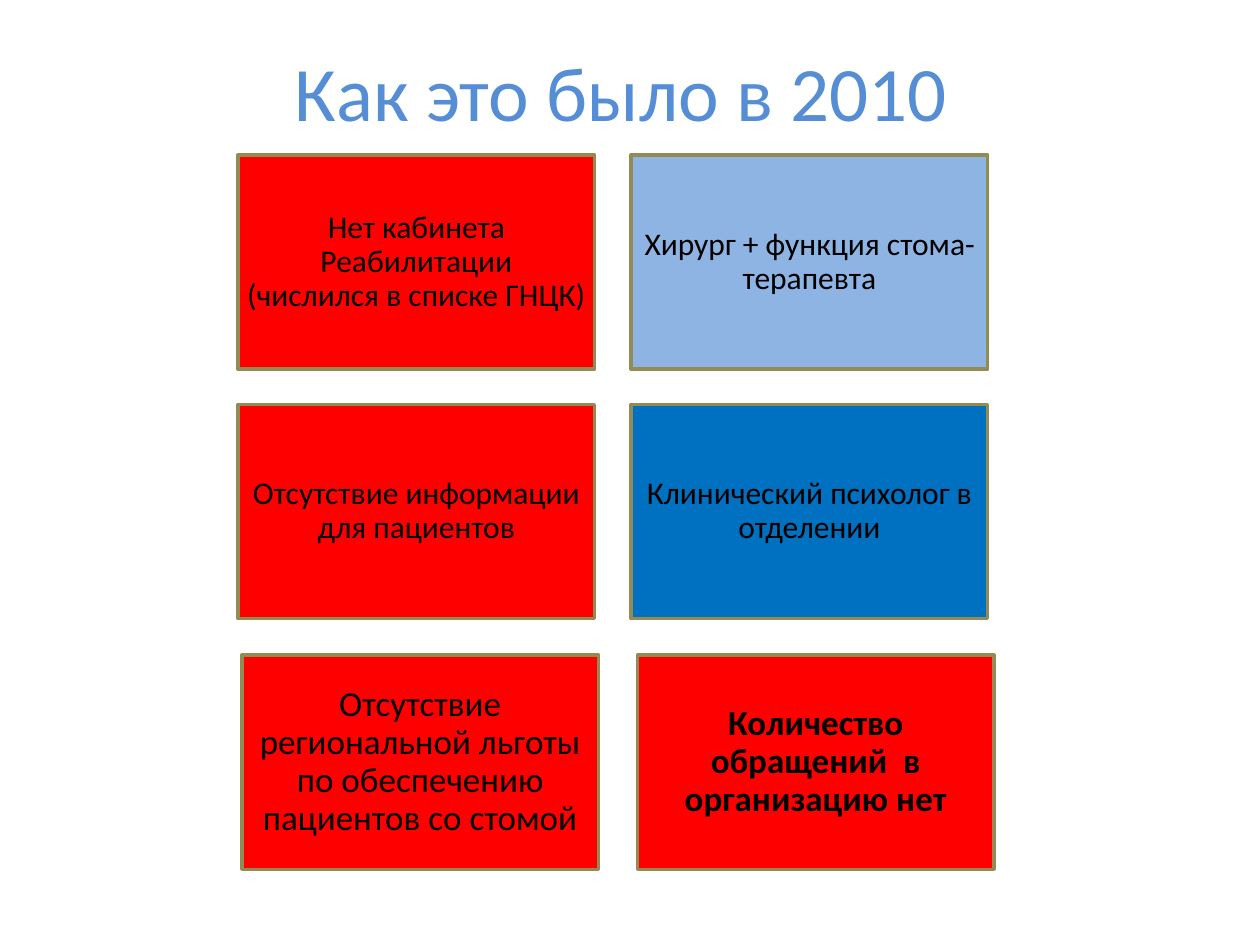
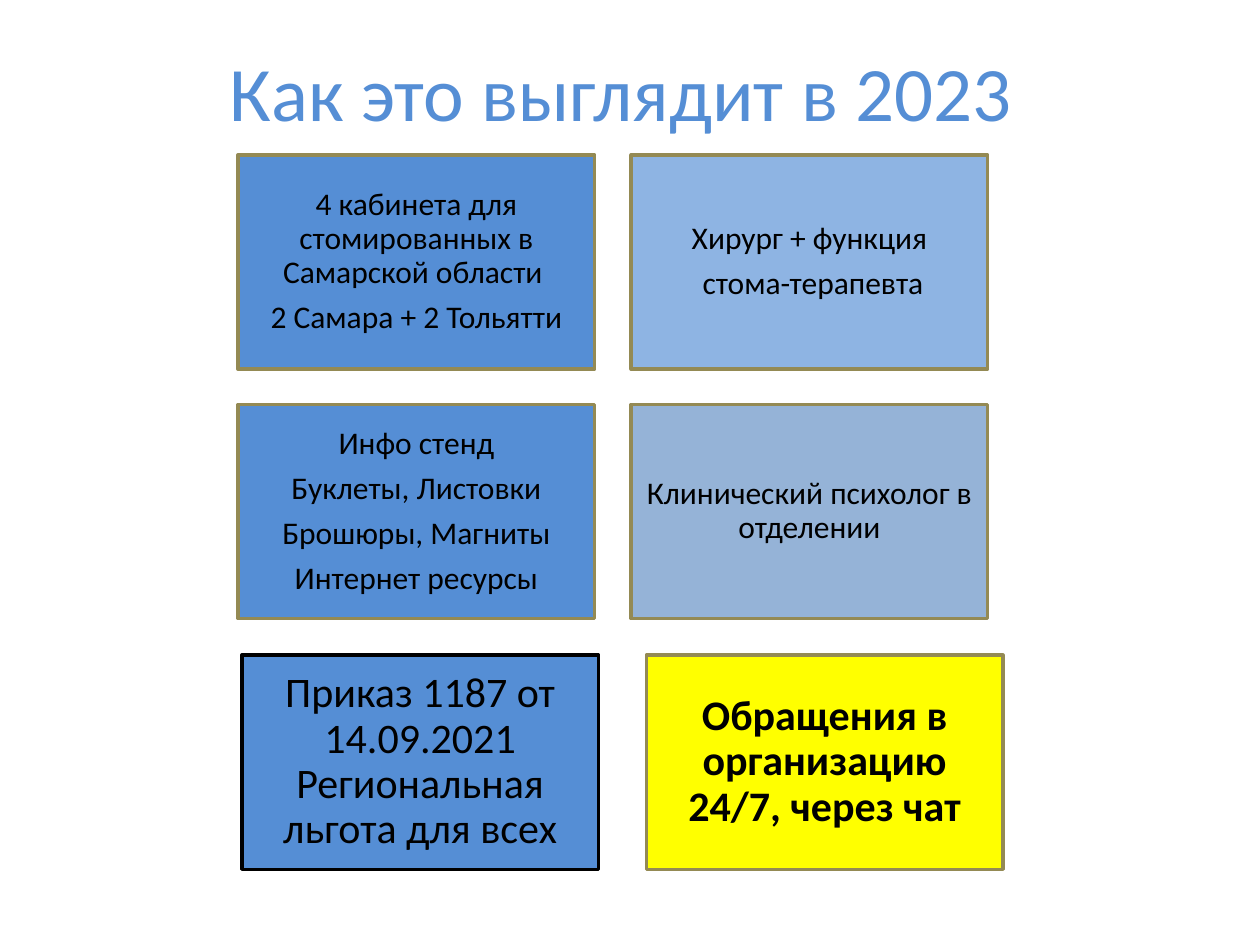
from pptx import Presentation
from pptx.dml.color import RGBColor
from pptx.enum import shapes, text
from pptx.util import Inches, Pt

COLORS = {
    "title": "558ED5",
    "problem": "FF0000",
    "surgeon": "8EB4E3",
    "psychologist_2010": "0070C0",
    "psychologist_2023": "95B3D7",
    "solved": "558ED5",
    "requests": "FFFF00",
    "border": "948A54",
    "black": "000000",
}
FONT = "Calibri"
CARD_WIDTH, CARD_HEIGHT = 2.83, 1.7
ROW_TOPS = (1.23, 3.21, 5.2)
UPPER_LEFTS = (1.89, 5.01)
LOWER_LEFT = 1.92


def rgb(name):
    return RGBColor.from_string(COLORS[name])


def style_paragraph(paragraph, size, color, bold=False):
    paragraph.alignment = text.PP_ALIGN.CENTER
    paragraph.font.name = FONT
    paragraph.font.size = Pt(size)
    paragraph.font.bold = bold
    paragraph.font.color.rgb = rgb(color)


years = [
    {
        "title": "Как это было в 2010",
        "lower_right": 5.06,
        "lower_size": 20,
        "lower_inset": 0.08,
        "cards": [
            ("problem", "border", "Нет кабинета Реабилитации\v(числился в списке ГНЦК)"),
            ("surgeon", "border", "Хирург + функция стома-терапевта"),
            ("problem", "border", "Отсутствие информации для пациентов"),
            ("psychologist_2010", "border", "Клинический психолог в отделении"),
            ("problem", "border",
             "Отсутствие региональной льготы по обеспечению пациентов со стомой"),
            ("problem", "border", "Количество обращений  в организацию нет"),
        ],
    },
    {
        "title": "Как это выглядит в 2023",
        "lower_right": 5.13,
        "lower_size": 24,
        "lower_inset": 0.1,
        "cards": [
            ("solved", "border",
             "4 кабинета для стомированных в Самарской области \n2 Самара + 2 Тольятти"),
            ("surgeon", "border", "Хирург + функция\n стома-терапевта"),
            ("solved", "border",
             "Инфо стенд\nБуклеты, Листовки\nБрошюры, Магниты\nИнтернет ресурсы"),
            ("psychologist_2023", "border", "Клинический психолог в отделении"),
            ("solved", "black", "Приказ 1187 от 14.09.2021 Региональная льгота для всех"),
            ("requests", "border", "Обращения в организацию 24/7, через чат"),
        ],
    },
]

prs = Presentation()
prs.slide_width, prs.slide_height = Inches(10), Inches(7.5)

for year in years:
    slide = prs.slides.add_slide(prs.slide_layouts[5])
    title = slide.shapes.title
    title.left, title.top = Inches(0.43), Inches(0.21)
    title.width, title.height = Inches(9), Inches(1.02)
    title.text_frame.text = year["title"]
    title.text_frame.vertical_anchor = text.MSO_ANCHOR.MIDDLE
    style_paragraph(title.text_frame.paragraphs[0], 44, "title")

    for index, (fill, border, wording) in enumerate(year["cards"]):
        row, column = divmod(index, 2)
        lower = row == 2
        lefts = (LOWER_LEFT, year["lower_right"]) if lower else UPPER_LEFTS
        size = year["lower_size"] if lower else 18
        inset = Inches(year["lower_inset"] if lower else 0.07)

        card = slide.shapes.add_shape(
            shapes.MSO_SHAPE.RECTANGLE, Inches(lefts[column]), Inches(ROW_TOPS[row]),
            Inches(CARD_WIDTH), Inches(CARD_HEIGHT))
        card.shadow.inherit = False
        card.fill.solid()
        card.fill.fore_color.rgb = rgb(fill)
        card.line.color.rgb = rgb(border)
        card.line.width = Pt(2)

        frame = card.text_frame
        frame.word_wrap = True
        frame.vertical_anchor = text.MSO_ANCHOR.MIDDLE
        frame.margin_left = frame.margin_right = inset
        frame.margin_top = frame.margin_bottom = inset
        frame.text = wording
        for paragraph in frame.paragraphs:
            style_paragraph(paragraph, size, "black", bold=lower and column == 1)
            paragraph.line_spacing = 0.9
            paragraph.space_after = Pt(round(size * 0.35, 1))

prs.save("out.pptx")
